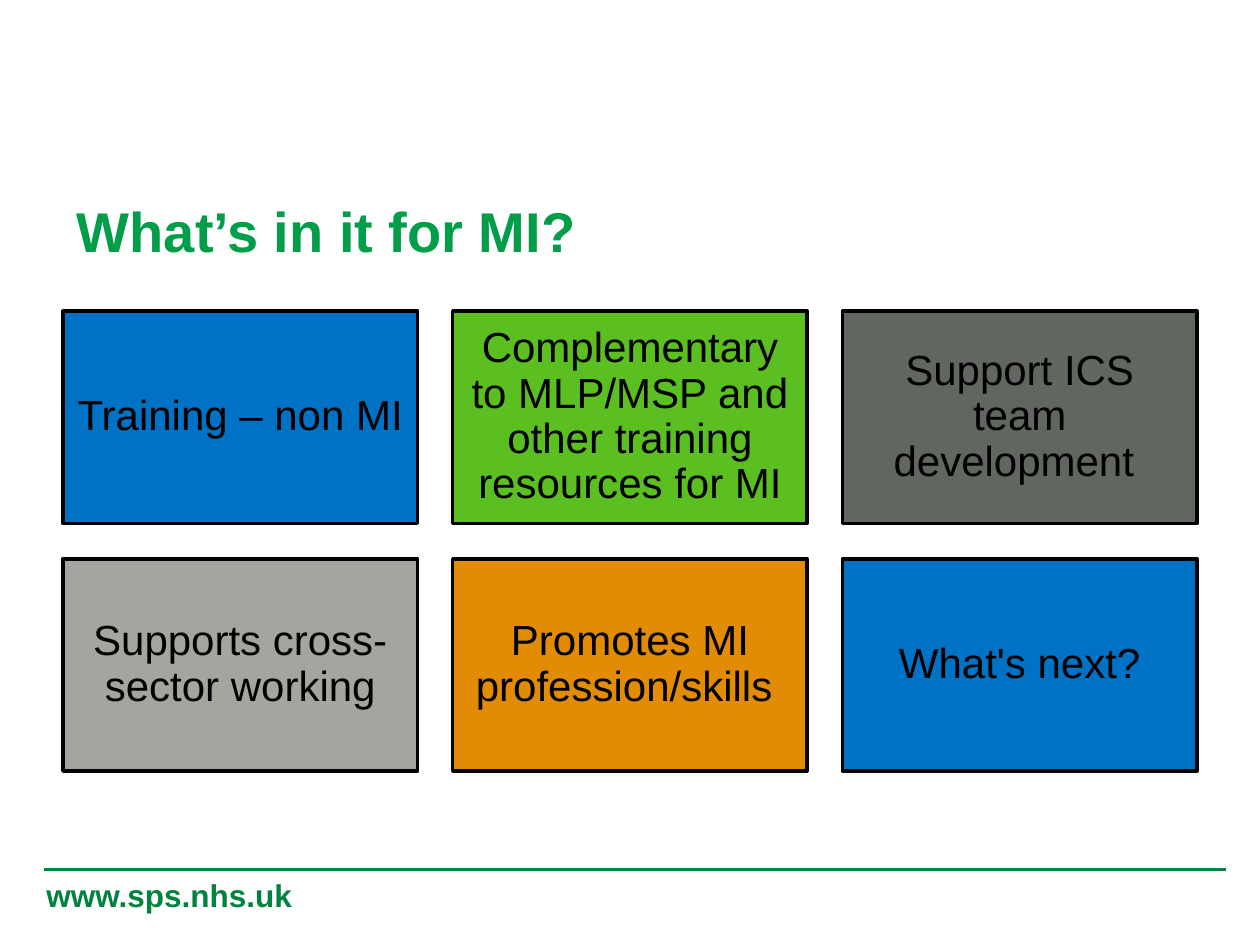
from lxml import etree
from pptx import Presentation
from pptx.dml.color import RGBColor
from pptx.enum.shapes import MSO_CONNECTOR, MSO_SHAPE
from pptx.enum.text import MSO_ANCHOR, PP_ALIGN
from pptx.oxml.ns import qn
from pptx.util import Inches, Pt

STRAIGHT = MSO_CONNECTOR.STRAIGHT
RECTANGLE = MSO_SHAPE.RECTANGLE
MIDDLE = MSO_ANCHOR.MIDDLE
LEFT, CENTER = PP_ALIGN.LEFT, PP_ALIGN.CENTER

FONT = "Arial"
BLACK = RGBColor(0x00, 0x00, 0x00)
BLUE = RGBColor(0x00, 0x72, 0xC6)
LIME = RGBColor(0x5B, 0xBF, 0x21)
DARK_GREY = RGBColor(0x62, 0x66, 0x60)
LIGHT_GREY = RGBColor(0xA3, 0xA6, 0x9F)
ORANGE = RGBColor(0xE2, 0x8C, 0x05)
TITLE_GREEN = RGBColor(0x00, 0x9E, 0x49)
FOOTER_GREEN = RGBColor(0x01, 0x83, 0x3E)

COLUMNS = 3
BENEFITS = [
    ("Training – non MI ", BLUE),
    ("Complementary to MLP/MSP and other training resources for MI", LIME),
    ("Support ICS team development ", DARK_GREY),
    ("Supports cross-sector working", LIGHT_GREY),
    ("Promotes MI profession/skills ", ORANGE),
    ("What's next?", BLUE),
]


def write(tf, text, size, color, bold=False, align=LEFT):
    """Write one formatted run into the first paragraph and return the paragraph."""
    tf.word_wrap = True
    p = tf.paragraphs[0]
    p.alignment = align
    r = p.add_run()
    r.text = text
    r.font.name = FONT
    r.font.size = Pt(size)
    r.font.bold = bold
    r.font.color.rgb = color
    return p


def add_title(s, left, top, width, height):
    """Place and format the title placeholder."""
    sp = s.shapes.title
    sp.left, sp.top, sp.width, sp.height = left, top, width, height
    sp.text_frame.vertical_anchor = MIDDLE
    write(sp.text_frame, "What’s in it for MI?", 32, TITLE_GREEN, bold=True)


def add_card(s, left, top, width, height, text, color):
    """Draw one outlined card with centred text."""
    sp = s.shapes.add_shape(RECTANGLE, left, top, width, height)
    sp.shadow.inherit = False
    sp.fill.solid()
    sp.fill.fore_color.rgb = color
    sp.line.color.rgb = BLACK
    sp.line.width = Pt(2)
    tf = sp.text_frame
    tf.margin_left = tf.margin_right = Inches(0.1)
    tf.margin_top = tf.margin_bottom = Inches(0.1)
    tf.vertical_anchor = MIDDLE
    p = write(tf, text, 24, BLACK, align=CENTER)
    p.line_spacing = 0.9


def add_cards(s, left, top, width, height):
    """Lay the benefit cards out in an evenly spaced grid."""
    gap = Inches(0.28)
    rows = len(BENEFITS) // COLUMNS
    card_w = (width - gap * (COLUMNS - 1)) // COLUMNS
    card_h = (height - gap * (rows - 1)) // rows
    for i, (text, color) in enumerate(BENEFITS):
        row, col = divmod(i, COLUMNS)
        x = left + col * (card_w + gap)
        y = top + row * (card_h + gap)
        add_card(s, x, y, card_w, card_h, text, color)


def add_footer(s, left, top, width, height):
    """Draw the footer rule with the web address below it."""
    inset = Inches(0.08)
    rule = s.shapes.add_connector(STRAIGHT, left + inset, top, left + width, top)
    rule.line.color.rgb = FOOTER_GREEN
    rule.line.width = Pt(1.5)
    etree.SubElement(rule._element.spPr, qn("a:effectLst"))
    box = s.shapes.add_textbox(left, top, Inches(4.41), height)
    write(box.text_frame, "www.sps.nhs.uk", 18, FOOTER_GREEN, bold=True)


def main():
    """Build the slide and save it."""
    prs = Presentation()
    prs.slide_width, prs.slide_height = Inches(10), Inches(7.5)
    s = prs.slides.add_slide(prs.slide_layouts[5])
    add_footer(s, Inches(0.27), Inches(6.9), Inches(9.46), Inches(0.4))
    add_title(s, Inches(0.51), Inches(1.47), Inches(9), Inches(0.71))
    add_cards(s, Inches(0.5), Inches(2.47), Inches(9), Inches(3.65))
    prs.save("out.pptx")


if __name__ == "__main__":
    main()
